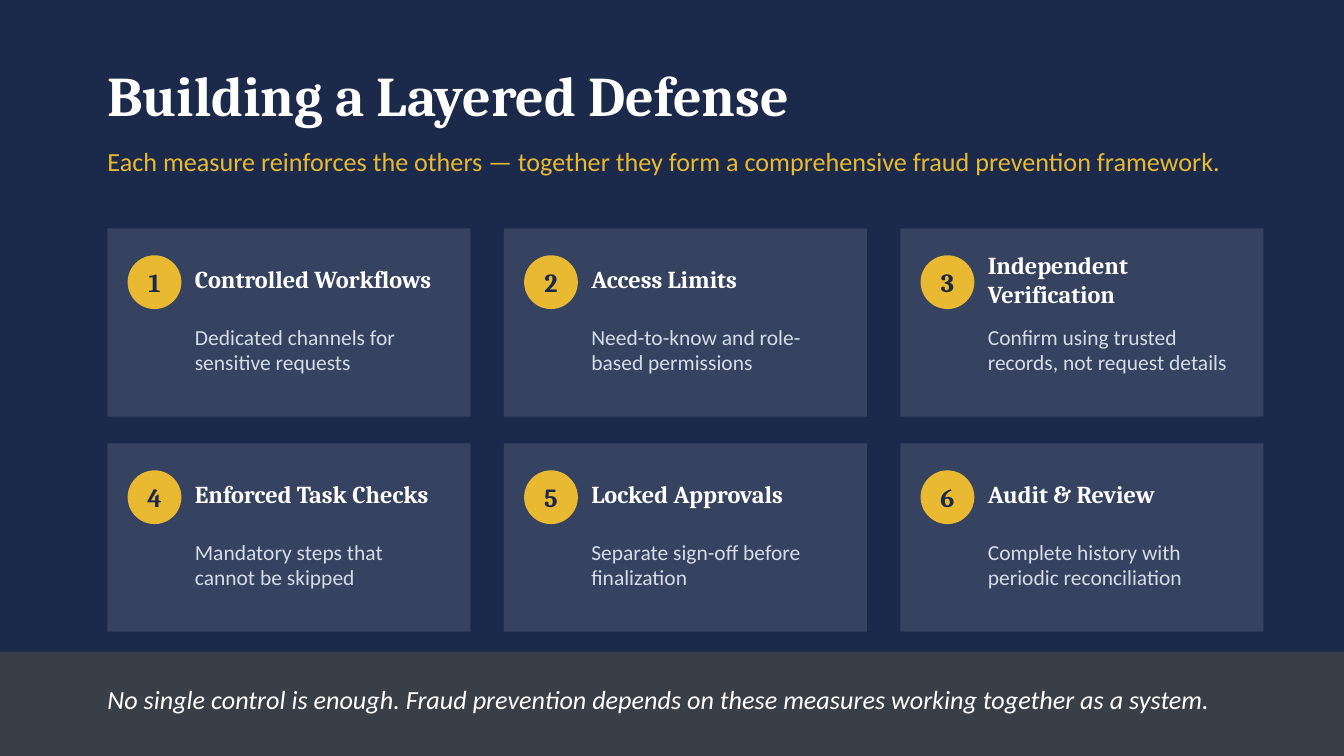
from lxml import etree
from pptx import Presentation
from pptx.dml.color import RGBColor
from pptx.enum.shapes import MSO_SHAPE
from pptx.enum.text import MSO_ANCHOR, PP_ALIGN
from pptx.oxml.ns import qn
from pptx.util import Inches, Pt

RECT, OVAL = MSO_SHAPE.RECTANGLE, MSO_SHAPE.OVAL
MIDDLE = MSO_ANCHOR.MIDDLE
LEFT, CENTER = PP_ALIGN.LEFT, PP_ALIGN.CENTER

NAVY = RGBColor(0x1B, 0x2A, 0x4A)
GOLD = RGBColor(0xE8, 0xB9, 0x31)
WHITE = RGBColor(0xFF, 0xFF, 0xFF)
PALE = RGBColor(0xD4, 0xDC, 0xE6)
HEAD, BODY = "Cambria", "Calibri"

# Inches
WIDE = 10
HIGH = WIDE * 9 / 16
EDGE, SPAN = 0.8, 8.4
TOP = 1.7
COLS = 3
CARD_W, CARD_H = 2.7, 1.4
GAP_X, GAP_Y = 0.25, 0.2
DISC = 0.4
BAR = 4.85

CARDS = [
    ("Controlled Workflows", "Dedicated channels for sensitive requests"),
    ("Access Limits", "Need-to-know and role-based permissions"),
    ("Independent Verification",
     "Confirm using trusted records, not request details"),
    ("Enforced Task Checks", "Mandatory steps that cannot be skipped"),
    ("Locked Approvals", "Separate sign-off before finalization"),
    ("Audit & Review", "Complete history with periodic reconciliation"),
]


def add_fill(slide, kind, box, color, alpha=100):
    """Add a plain shape without outline; alpha is its opacity in percent."""
    shape = slide.shapes.add_shape(kind, *map(Inches, box))
    shape.shadow.inherit = False
    shape.line.fill.background()
    shape.fill.solid()
    shape.fill.fore_color.rgb = color
    if alpha < 100:
        tone = shape.fill._xPr.find(qn("a:solidFill"))[0]
        etree.SubElement(tone, qn("a:alpha"), val=str(alpha * 1000))


def add_text(slide, box, text, size, color, face=BODY, bold=False,
             slant=False, align=LEFT):
    frame = slide.shapes.add_textbox(*map(Inches, box)).text_frame
    frame.word_wrap = True
    frame.vertical_anchor = MIDDLE
    frame.margin_left = frame.margin_right = 0
    frame.margin_top = frame.margin_bottom = 0
    para = frame.paragraphs[0]
    para.text = text
    para.alignment = align
    font = para.font
    font.name, font.size, font.color.rgb = face, Pt(size), color
    font.bold, font.italic = bold, slant


def add_card(slide, index, title, note):
    row, col = divmod(index, COLS)
    x = EDGE + col * (CARD_W + GAP_X)
    y = TOP + row * (CARD_H + GAP_Y)
    disc = (x + 0.15, y + 0.2, DISC, DISC)
    text_x, text_w = x + 0.65, 1.85

    add_fill(slide, RECT, (x, y, CARD_W, CARD_H), WHITE, alpha=12)
    add_fill(slide, OVAL, disc, GOLD)
    add_text(slide, disc, str(index + 1), 14, NAVY, HEAD, bold=True,
             align=CENTER)
    add_text(slide, (text_x, y + 0.15, text_w, 0.45), title, 13, WHITE, HEAD,
             bold=True)
    add_text(slide, (text_x, y + 0.6, text_w, 0.6), note, 11.5, PALE)


def main():
    deck = Presentation()
    deck.slide_width, deck.slide_height = Inches(WIDE), Inches(HIGH)
    slide = deck.slides.add_slide(deck.slide_layouts[6])
    back = slide.background.fill
    back.solid()
    back.fore_color.rgb = NAVY

    add_text(slide, (EDGE, 0.35, SPAN, 0.7), "Building a Layered Defense",
             30, WHITE, HEAD, bold=True)
    add_text(slide, (EDGE, 1, SPAN, 0.4),
             "Each measure reinforces the others — together they form "
             "a comprehensive fraud prevention framework.", 14, GOLD)

    for index, (title, note) in enumerate(CARDS):
        add_card(slide, index, title, note)

    add_fill(slide, RECT, (0, BAR, WIDE, HIGH - BAR), GOLD, alpha=15)
    add_text(slide, (EDGE, BAR + 0.05, SPAN, 0.6),
             "No single control is enough. Fraud prevention depends on "
             "these measures working together as a system.", 14, WHITE,
             slant=True)
    deck.save("out.pptx")


if __name__ == "__main__":
    main()
